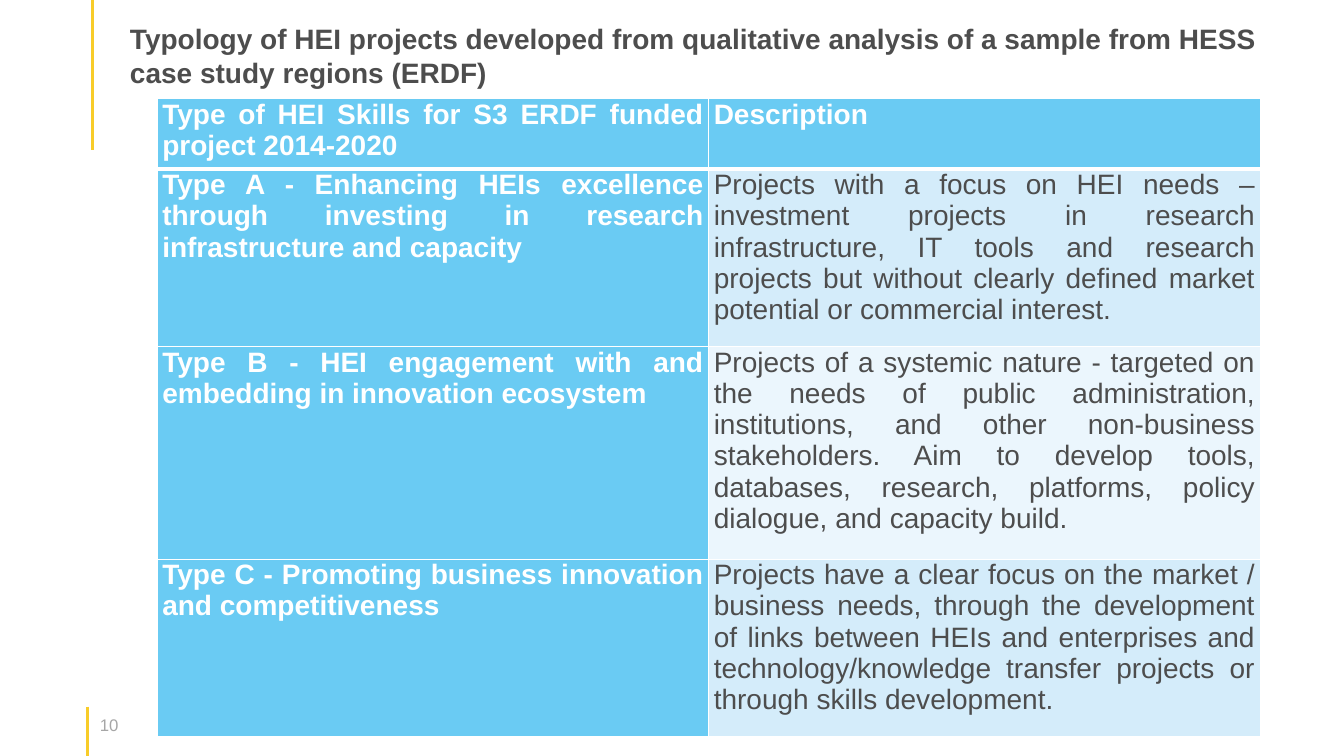
from dataclasses import dataclass

from lxml import etree
from pptx import Presentation
from pptx.dml.color import RGBColor
from pptx.enum.shapes import MSO_CONNECTOR
from pptx.enum.text import MSO_ANCHOR, PP_ALIGN
from pptx.oxml.ns import qn
from pptx.util import Inches, Length, Pt

STRAIGHT = MSO_CONNECTOR.STRAIGHT
JUSTIFY, LEFT = PP_ALIGN.JUSTIFY, PP_ALIGN.LEFT
TOP, BOTTOM = MSO_ANCHOR.TOP, MSO_ANCHOR.BOTTOM

WHITE = RGBColor(0xFF, 0xFF, 0xFF)
GREY = RGBColor(0x4D, 0x4D, 0x4D)
PALE_GREY = RGBColor(0xA6, 0xA6, 0xA6)
YELLOW = RGBColor(0xF8, 0xCC, 0x29)
BLUE = RGBColor(0x6A, 0xCB, 0xF3)
BANDS = (RGBColor(0xD4, 0xEC, 0xFA), RGBColor(0xEB, 0xF6, 0xFD))

FONT = "Arial"
SLIDE_WIDTH, SLIDE_HEIGHT = Inches(13.33), Inches(7.5)
BORDER, HEADER_BORDER = Pt(1), Pt(3)


@dataclass(frozen=True)
class Label:
    """A text box; place and size are percentages of the slide."""
    text: str
    left: float
    top: float
    width: float
    height: float
    size: int
    color: RGBColor
    bold: bool
    anchor: MSO_ANCHOR
    side_inset: float
    bottom_inset: float


@dataclass(frozen=True)
class Rule:
    """A vertical line; positions are percentages of the slide."""
    x: float
    top: float
    bottom: float


@dataclass(frozen=True)
class ProjectType:
    name: str
    description: str
    height: float


LABELS = (
    Label("10", 7.43, 93.87, 3.68, 4, 12, PALE_GREY, False, TOP, 0, 0.05),
    Label("Typology of HEI projects developed from qualitative analysis of a sample "
          "from HESS case study regions (ERDF)",
          8.93, 2.8, 87.62, 8.93, 20, GREY, True, BOTTOM, 0.1, 0),
)
RULES = (Rule(6.53, 93.47, 100), Rule(6.9, 0, 19.87))

TABLE_LEFT, TABLE_TOP, TABLE_WIDTH = 11.7, 13.07, 82.07
ROWS = (
    ProjectType("Type of HEI Skills for S3 ERDF funded project 2014-2020",
                "Description", 9.33),
    ProjectType("Type A - Enhancing HEIs excellence through investing in research "
                "infrastructure and capacity",
                "Projects with a focus on HEI needs – investment projects in research "
                "infrastructure, IT tools and research projects but without clearly "
                "defined market potential or commercial interest.", 23.47),
    ProjectType("Type B - HEI engagement with and embedding in innovation ecosystem",
                "Projects of a systemic nature - targeted on the needs of public "
                "administration, institutions, and other non-business stakeholders. "
                "Aim to develop tools, databases, research, platforms, policy "
                "dialogue, and capacity build.", 28.13),
    ProjectType("Type C - Promoting business innovation and competitiveness",
                "Projects have a clear focus on the market / business needs, through "
                "the development of links between HEIs and enterprises and "
                "technology/knowledge transfer projects or through skills "
                "development.", 23.47),
)


def across(percent: float) -> Length:
    return Length(round(SLIDE_WIDTH * percent / 100))


def down(percent: float) -> Length:
    return Length(round(SLIDE_HEIGHT * percent / 100))


def write(frame, text: str, size: int, color: RGBColor, bold: bool,
          alignment: PP_ALIGN) -> None:
    frame.text = text
    para = frame.paragraphs[0]
    para.alignment = alignment
    font = para.runs[0].font
    font.name, font.size, font.bold = FONT, Pt(size), bold
    font.color.rgb = color


def draw_label(page, label: Label) -> None:
    box = page.shapes.add_textbox(across(label.left), down(label.top),
                                  across(label.width), down(label.height))
    frame = box.text_frame
    frame.word_wrap = True
    frame.vertical_anchor = label.anchor
    frame.margin_left = frame.margin_right = Inches(label.side_inset)
    frame.margin_top = Inches(0.05)
    frame.margin_bottom = Inches(label.bottom_inset)
    write(frame, label.text, label.size, label.color, label.bold, LEFT)


def draw_rule(page, rule: Rule) -> None:
    line = page.shapes.add_connector(STRAIGHT, across(rule.x), down(rule.top),
                                     across(rule.x), down(rule.bottom))
    line.line.color.rgb = YELLOW
    line.line.width = Pt(2.25)
    etree.SubElement(line._element.spPr, qn("a:effectLst"))


def set_borders(cell, top: Length, bottom: Length) -> None:
    properties = cell._tc.get_or_add_tcPr()
    sides = (("a:lnL", BORDER), ("a:lnR", BORDER), ("a:lnT", top), ("a:lnB", bottom))
    for side, width in sides:
        edge = etree.SubElement(properties, qn(side), w=str(int(width)))
        fill = etree.SubElement(edge, qn("a:solidFill"))
        etree.SubElement(fill, qn("a:srgbClr"), val=str(WHITE))


def draw_table(page, rows: tuple[ProjectType, ...]) -> None:
    height = sum(row.height for row in rows)
    table = page.shapes.add_table(len(rows), 2, across(TABLE_LEFT), down(TABLE_TOP),
                                  across(TABLE_WIDTH), down(height)).table
    for index, row in enumerate(rows):
        table.rows[index].height = down(row.height)
        top = HEADER_BORDER if index == 1 else BORDER
        bottom = HEADER_BORDER if index == 0 else BORDER
        for column, text in enumerate((row.name, row.description)):
            heading = index == 0 or column == 0
            cell = table.cell(index, column)
            cell.margin_left = cell.margin_right = Inches(0.05)
            cell.margin_top = cell.margin_bottom = 0
            set_borders(cell, top, bottom)
            cell.fill.solid()
            cell.fill.fore_color.rgb = BLUE if heading else BANDS[(index - 1) % 2]
            write(cell.text_frame, text, 20, WHITE if heading else GREY, heading, JUSTIFY)


def main() -> None:
    deck = Presentation()
    deck.slide_width, deck.slide_height = SLIDE_WIDTH, SLIDE_HEIGHT
    page = deck.slides.add_slide(deck.slide_layouts[6])
    for rule in RULES:
        draw_rule(page, rule)
    for label in LABELS:
        draw_label(page, label)
    draw_table(page, ROWS)
    deck.save("out.pptx")


if __name__ == "__main__":
    main()
